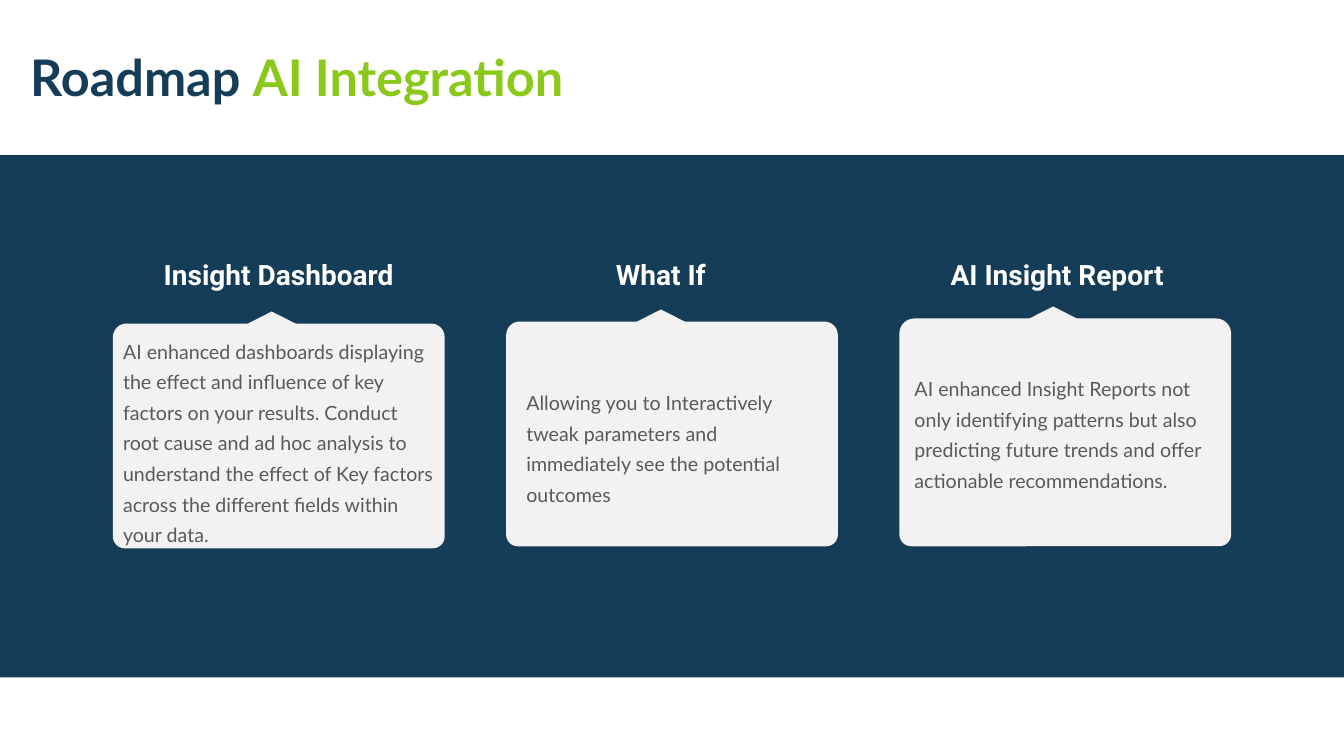
from pptx import Presentation
from pptx.dml.color import RGBColor
from pptx.enum.shapes import MSO_SHAPE
from pptx.enum.text import MSO_ANCHOR, PP_ALIGN
from pptx.util import Inches, Pt

RECTANGLE = MSO_SHAPE.RECTANGLE
CARD = MSO_SHAPE.ROUND_2_SAME_RECTANGLE
TRIANGLE = MSO_SHAPE.ISOSCELES_TRIANGLE
TOP, MIDDLE = MSO_ANCHOR.TOP, MSO_ANCHOR.MIDDLE
LEFT, CENTER = PP_ALIGN.LEFT, PP_ALIGN.CENTER

NAVY, GREEN, WHITE, PALE, GRAY = "163D57", "8AC819", "FFFFFF", "F2F2F2", "595959"

TITLE = [("Roadmap ", NAVY), ("AI Integration", GREEN)]
FEATURES = [
    {
        "heading": "Insight Dashboard",
        "body": "AI enhanced dashboards displaying the effect and influence of key factors "
                "on your results. Conduct root cause and ad hoc analysis to understand the "
                "effect of Key factors across the different fields within your data.",
        "heading_left": 1.43, "body_at": (1.22, 3.3, 3.09, 1.85),
        "card_top": 3.21, "card_height": 2.23, "rounding": 0.06, "pointer_left": 2.32,
    },
    {
        "heading": "What If",
        "body": "Allowing you to Interactively tweak parameters and immediately see the "
                "potential outcomes",
        "heading_left": 5.22, "body_at": (5.22, 3.81, 2.95, 1.23),
        "card_top": 3.19, "card_height": 2.23, "rounding": 0.06, "pointer_left": 6.18,
    },
    {
        "heading": "AI Insight Report",
        "body": "AI enhanced Insight Reports not only identifying patterns but also "
                "predicting future trends and offer actionable recommendations.",
        "heading_left": 9.15, "body_at": (9.07, 3.67, 3.09, 1.29),
        "card_top": 3.16, "card_height": 2.26, "rounding": 0.065, "pointer_left": 10.07,
    },
]
CARD_LEFT, CARD_STEP, CARD_WIDTH = 1.12, 3.9, 3.29
POINTER_WIDTH, POINTER_HEIGHT, POINTER_RISE = 0.75, 0.19, 0.12


def color(value):
    return RGBColor.from_string(value)


def add_panel(page, kind, at, fill):
    panel = page.shapes.add_shape(kind, *map(Inches, at))
    panel.shadow.inherit = False
    panel.fill.solid()
    panel.fill.fore_color.rgb = color(fill)
    panel.line.fill.background()
    return panel


def style_font(font, name, size, bold):
    font.name = name
    font.size = Pt(size)
    font.bold = bold


def add_label(page, text, at, font_name, size, fill, bold, align, anchor):
    frame = page.shapes.add_textbox(*map(Inches, at)).text_frame
    frame.word_wrap = True
    frame.vertical_anchor = anchor
    frame.margin_left = frame.margin_right = 0
    frame.margin_top = frame.margin_bottom = 0
    para = frame.paragraphs[0]
    para.text = text
    para.alignment = align
    style_font(para.font, font_name, size, bold)
    para.font.color.rgb = color(fill)
    return para


def add_title(page):
    title = page.shapes.title
    title.left, title.top, title.width, title.height = map(Inches, (0.2, 0.48, 6.66, 0.65))
    title.text_frame.vertical_anchor = TOP
    para = title.text_frame.paragraphs[0]
    para.alignment = LEFT
    para.line_spacing = 0.9
    style_font(para.font, "Lato", 36, True)
    for text, fill in TITLE:
        span = para.add_run()
        span.text = text
        span.font.color.rgb = color(fill)


def add_feature(page, index, feature):
    top = feature["card_top"]
    card_at = (CARD_LEFT + index * CARD_STEP, top, CARD_WIDTH, feature["card_height"])
    card = add_panel(page, CARD, card_at, PALE)
    card.adjustments[0] = feature["rounding"]
    card.adjustments[1] = 0.052
    pointer_at = (feature["pointer_left"], top - POINTER_RISE, POINTER_WIDTH, POINTER_HEIGHT)
    add_panel(page, TRIANGLE, pointer_at, PALE)
    add_label(page, feature["heading"], (feature["heading_left"], 2.45, 2.67, 0.54),
              "Roboto", 20, WHITE, True, CENTER, MIDDLE)
    body = add_label(page, feature["body"], feature["body_at"],
                     "Lato", 14, GRAY, False, LEFT, TOP)
    body.line_spacing = 1.3


def main():
    deck = Presentation()
    deck.slide_width, deck.slide_height = Inches(13.33), Inches(7.5)
    page = deck.slides.add_slide(deck.slide_layouts[5])
    add_title(page)
    add_panel(page, RECTANGLE, (0, 1.54, 13.33, 5.18), NAVY)
    for index, feature in enumerate(FEATURES):
        add_feature(page, index, feature)
    deck.save("out.pptx")


if __name__ == "__main__":
    main()
